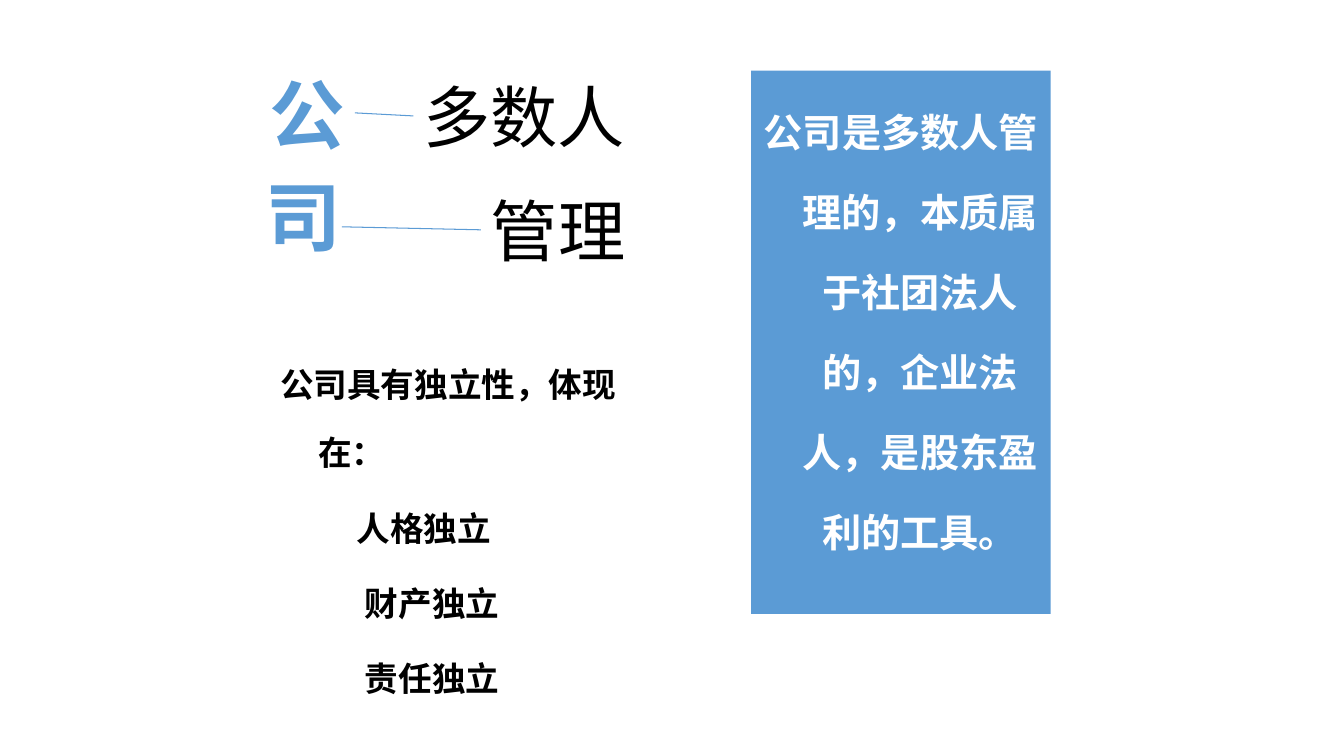
import pptx
import pptx.util
import pptx.dml.color
import pptx.enum.shapes
import pptx.enum.text
import pptx.oxml
import pptx.oxml.ns
from pptx.util import Inches, Pt

BLUE, BLACK, WHITE = "5B9BD5", "000000", "FFFFFF"
MEANINGS = [
    {"term": ("公", (2.57, 0.62, 0.95, 1)), "meaning": ("多数人", (4.1, 0.7, 2.2, 0.9)), "start": None},
    {"term": ("司", (2.53, 1.64, 0.95, 1)), "meaning": ("管理", (4.77, 1.83, 1.53, 0.9)), "start": (3.39, 2.25)},
]
HANGING = (0.38, -0.38)
ESSENCE = [("公司是多数人管理的，本质属于社团法人的，企业法人，是股东盈利的工具。", HANGING)]
ESSENCE_BOX = (7.45, 0.7, 2.97, 5.39)
INDEPENDENCE = [
    ("公司具有独立性，体现在：", HANGING),
    ("人格独立", (0.76, 0)),
    ("财产独立", (0.84, 0)),
    ("责任独立", (0.84, 0)),
]
INDEPENDENCE_BOX = (2.68, 3.28, 4.14, 3.2)
ALIGN = pptx.enum.text.PP_ALIGN


def rgb(color):
    return pptx.dml.color.RGBColor.from_string(color)


def style(paragraph, font, size, color, bold, align):
    paragraph.alignment = align
    for run in paragraph.runs:
        run.font.name = font
        run.font.size = Pt(size)
        run.font.bold = bold
        run.font.color.rgb = rgb(color)


def add_word(slide, word, size, color, bold, align):
    text, box = word
    label = slide.shapes.add_textbox(*map(Inches, box))
    frame = label.text_frame
    frame.word_wrap = False
    frame.auto_size = pptx.enum.text.MSO_AUTO_SIZE.SHAPE_TO_FIT_TEXT
    frame.text = text
    style(frame.paragraphs[0], "Arial", size, color, bold, align)
    return label


def add_link(slide, term, meaning, start):
    begin = map(Inches, start) if start else (0, 0)
    link = slide.shapes.add_connector(pptx.enum.shapes.MSO_CONNECTOR.STRAIGHT, *begin, 0, 0)
    if not start:
        link.begin_connect(term, 3)
    link.end_connect(meaning, 1)
    link.line.color.rgb = rgb(BLUE)
    link.line.width = Pt(0.75)
    link._element.spPr.append(pptx.oxml.parse_xml(
        f'<a:effectLst {pptx.oxml.ns.nsdecls("a")}/>'))


def fill_body(shape, lines, size, color, align):
    frame = shape.text_frame
    frame.word_wrap = True
    frame.vertical_anchor = pptx.enum.text.MSO_ANCHOR.TOP
    frame.text = "\n".join(text for text, _ in lines)
    for paragraph, (_, (margin, indent)) in zip(frame.paragraphs, lines):
        style(paragraph, "Calibri", size, color, True, align)
        paragraph.line_spacing = 1.7
        paragraph.space_before = Pt(0)
        properties = paragraph._p.get_or_add_pPr()
        properties.set("marL", str(Inches(margin)))
        properties.set("indent", str(Inches(indent)))
        properties.set("hangingPunct", "0")
        before = properties.find(pptx.oxml.ns.qn("a:spcBef"))
        before.remove(before[0])
        before.append(pptx.oxml.parse_xml(
            f'<a:spcPct {pptx.oxml.ns.nsdecls("a")} val="20000"/>'))


def main():
    deck = pptx.Presentation()
    deck.slide_width, deck.slide_height = Inches(13.33), Inches(7.5)
    slide = deck.slides.add_slide(deck.slide_layouts[6])

    for entry in MEANINGS:
        term = add_word(slide, entry["term"], 54, BLUE, True, ALIGN.CENTER)
        meaning = add_word(slide, entry["meaning"], 48, BLACK, False, ALIGN.LEFT)
        add_link(slide, term, meaning, entry["start"])

    essence = slide.shapes.add_shape(
        pptx.enum.shapes.MSO_SHAPE.RECTANGLE, *map(Inches, ESSENCE_BOX))
    essence.shadow.inherit = False
    essence.fill.solid()
    essence.fill.fore_color.rgb = rgb(BLUE)
    essence.line.fill.background()
    fill_body(essence, ESSENCE, 28, WHITE, ALIGN.CENTER)

    independence = slide.shapes.add_textbox(*map(Inches, INDEPENDENCE_BOX))
    fill_body(independence, INDEPENDENCE, 24, BLACK, ALIGN.LEFT)

    deck.save("out.pptx")


if __name__ == "__main__":
    main()
